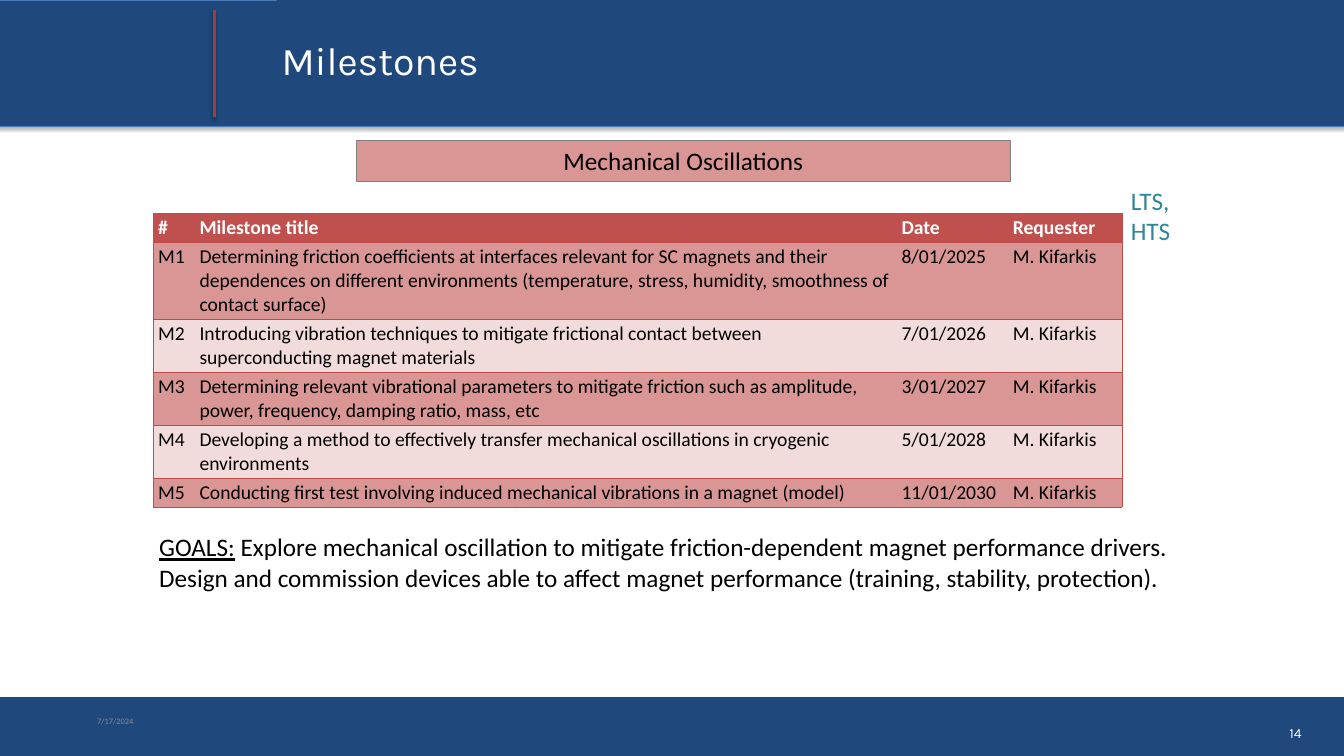
from lxml import etree
from pptx import Presentation
from pptx.dml.color import RGBColor
from pptx.enum.shapes import MSO_CONNECTOR, MSO_SHAPE
from pptx.enum.text import MSO_ANCHOR, MSO_AUTO_SIZE, PP_ALIGN
from pptx.oxml.ns import qn
from pptx.util import Inches, Pt

LEFT, CENTER, RIGHT = PP_ALIGN.LEFT, PP_ALIGN.CENTER, PP_ALIGN.RIGHT
TOP, MIDDLE = MSO_ANCHOR.TOP, MSO_ANCHOR.MIDDLE
RECTANGLE = MSO_SHAPE.RECTANGLE
STRAIGHT = MSO_CONNECTOR.STRAIGHT

NAVY, WHITE, BLACK = "1F497D", "FFFFFF", "000000"
RED, ROSE, PALE_ROSE, BORDER = "C0504D", "D99694", "F2DCDB", "BF4C48"
BODY_FONT, BRAND_FONT = "Calibri", "Karla"

COLUMN_WIDTHS = [0.82, 13.93, 2.21, 2.27]
HEADINGS = ["#", "Milestone title", "Date", "Requester"]
REQUESTER = "M. Kifarkis"
ROW_HEIGHT, EXTRA_LINE = 0.57, 0.47
# Title, due date, number of text lines
MILESTONES = [
    ("Determining friction coefficients at interfaces relevant for SC magnets "
     "and their dependences on different environments (temperature, stress, "
     "humidity, smoothness of contact surface)", "8/01/2025", 3),
    ("Introducing vibration techniques to mitigate frictional contact between "
     "superconducting magnet materials", "7/01/2026", 2),
    ("Determining relevant vibrational parameters to mitigate friction such as "
     "amplitude, power, frequency, damping ratio, mass, etc", "3/01/2027", 2),
    ("Developing a method to effectively transfer mechanical oscillations in "
     "cryogenic environments", "5/01/2028", 2),
    ("Conducting first test involving induced mechanical vibrations in a "
     "magnet (model)", "11/01/2030", 1),
]


def rgb(hex_color):
    return RGBColor.from_string(hex_color)


def add_run(paragraph, text, size, color, font=BODY_FONT, bold=False, underline=False):
    run = paragraph.add_run()
    run.text = text
    run.font.size = Pt(size)
    run.font.name = font
    run.font.color.rgb = rgb(color)
    run.font.bold = bold
    run.font.underline = underline


def write(frame, lines, size, color, font=BODY_FONT, align=LEFT, anchor=TOP,
          wrap=True, inset=0.1):
    """Fill a frame; each line is a list of (text, underline) runs."""
    frame.word_wrap = wrap
    frame.auto_size = MSO_AUTO_SIZE.NONE
    frame.vertical_anchor = anchor
    frame.margin_left = frame.margin_right = Inches(0.1)
    frame.margin_top = frame.margin_bottom = Inches(inset)
    for index, line in enumerate(lines):
        paragraph = frame.add_paragraph() if index else frame.paragraphs[0]
        paragraph.alignment = align
        for text, underline in line:
            add_run(paragraph, text, size, color, font, underline=underline)


def add_text(slide, box, lines, size, color, **options):
    text_box = slide.shapes.add_textbox(*map(Inches, box))
    write(text_box.text_frame, lines, size, color, **options)


def add_band(slide, box, fill, line=None):
    band = slide.shapes.add_shape(RECTANGLE, *map(Inches, box))
    band.shadow.inherit = False
    band.fill.solid()
    band.fill.fore_color.rgb = rgb(fill)
    if line:
        band.line.color.rgb = rgb(line)
        band.line.width = Pt(1)
    else:
        band.line.fill.background()
    return band


def add_shadow(shape, opacity):
    properties = shape._element.spPr
    effects = properties.find(qn("a:effectLst"))
    if effects is None:
        effects = etree.SubElement(properties, qn("a:effectLst"))
    shadow = etree.SubElement(effects, qn("a:outerShdw"), blurRad=str(Pt(6)),
                              dist=str(Pt(3)), dir="5400000", rotWithShape="0")
    color = etree.SubElement(shadow, qn("a:srgbClr"), val=BLACK)
    etree.SubElement(color, qn("a:alpha"), val=str(opacity * 1000))


def set_borders(cell, visible_sides):
    properties = cell._tc.get_or_add_tcPr()
    for index, side in enumerate(("lnL", "lnR", "lnT", "lnB")):
        line = etree.Element(qn(f"a:{side}"), w=str(Pt(0.75)))
        if side in visible_sides:
            fill = etree.SubElement(line, qn("a:solidFill"))
            etree.SubElement(fill, qn("a:srgbClr"), val=BORDER)
        else:
            etree.SubElement(line, qn("a:noFill"))
        properties.insert(index, line)


def add_milestone_table(slide):
    rows = [HEADINGS] + [[f"M{number}", title, date, REQUESTER]
                         for number, (title, date, _) in enumerate(MILESTONES, 1)]
    line_counts = [1] + [count for _, _, count in MILESTONES]
    heights = [ROW_HEIGHT + EXTRA_LINE * (count - 1) for count in line_counts]
    table = slide.shapes.add_table(
        len(rows), len(HEADINGS), Inches(3.04), Inches(4.23),
        Inches(sum(COLUMN_WIDTHS)), Inches(sum(heights))).table
    table.horz_banding = False
    for column, width in zip(table.columns, COLUMN_WIDTHS):
        column.width = Inches(width)

    last_column = len(HEADINGS) - 1
    for r, values in enumerate(rows):
        table.rows[r].height = Inches(heights[r])
        is_header = r == 0
        fill = RED if is_header else (ROSE if r % 2 else PALE_ROSE)
        for c, value in enumerate(values):
            cell = table.cell(r, c)
            cell.fill.solid()
            cell.fill.fore_color.rgb = rgb(fill)
            add_run(cell.text_frame.paragraphs[0], value, 28,
                    WHITE if is_header else BLACK, bold=is_header)
            sides = {"lnT", "lnB"}
            if c == 0:
                sides.add("lnL")
            if c == last_column:
                sides.add("lnR")
            set_borders(cell, sides)


def add_frame(slide):
    # Footer and header bands
    add_band(slide, (-0.04, 13.83, 26.74, 1.19), NAVY)
    header = add_band(slide, (-0.07, 0, 26.79, 2.5), NAVY, "4A7EBB")
    add_shadow(header, 35)
    # Divider beside the title
    divider = slide.shapes.add_connector(
        STRAIGHT, Inches(4.25), Inches(2.33), Inches(4.25), Inches(0.2))
    divider.line.color.rgb = rgb("9A403E")
    divider.line.width = Pt(4)
    add_shadow(divider, 38)


def place_title(slide, text):
    title = slide.shapes.title
    title.left, title.top, title.width, title.height = map(
        Inches, (5.49, -0.03, 21.21, 2.42))
    title.fill.solid()
    title.fill.fore_color.rgb = rgb(NAVY)
    write(title.text_frame, [[(text, False)]], 56, WHITE, font=BRAND_FONT, anchor=MIDDLE)
    # Bring the title in front of the header band
    slide.shapes._spTree.append(title._element)


def main():
    deck = Presentation()
    deck.slide_width, deck.slide_height = Inches(26.67), Inches(15)
    slide = deck.slides.add_slide(deck.slide_layouts[5])

    add_frame(slide)
    place_title(slide, "Milestones")

    # Footer date and page number
    add_text(slide, (1.83, 13.9, 6, 0.8), [[("7/17/2024", False)]], 12, "8C8C8C",
             anchor=MIDDLE, inset=0.05)
    add_text(slide, (25.4, 14.28, 0.53, 0.51), [[("14", False)]], 20, WHITE,
             font=BRAND_FONT, align=RIGHT, wrap=False)

    # Goals
    add_text(slide, (3.06, 10.45, 20.47, 2.63), [
        [("GOALS:", True),
         (" Explore mechanical oscillation to mitigate friction-dependent "
          "magnet performance drivers.", False)],
        [("Design and commission devices able to affect magnet performance "
          "(training, stability, protection).", False)],
    ], 36, BLACK)

    add_milestone_table(slide)

    # Topic heading and magnet types
    topic = add_band(slide, (7.07, 2.79, 12.98, 0.81), ROSE, "808080")
    write(topic.text_frame, [[("Mechanical Oscillations", False)]], 36, BLACK, align=CENTER)
    add_text(slide, (22.34, 3.57, 1.02, 1.41), [[("LTS,", False)], [("HTS", False)]],
             36, "31859C", wrap=False)

    deck.save("out.pptx")


if __name__ == "__main__":
    main()
